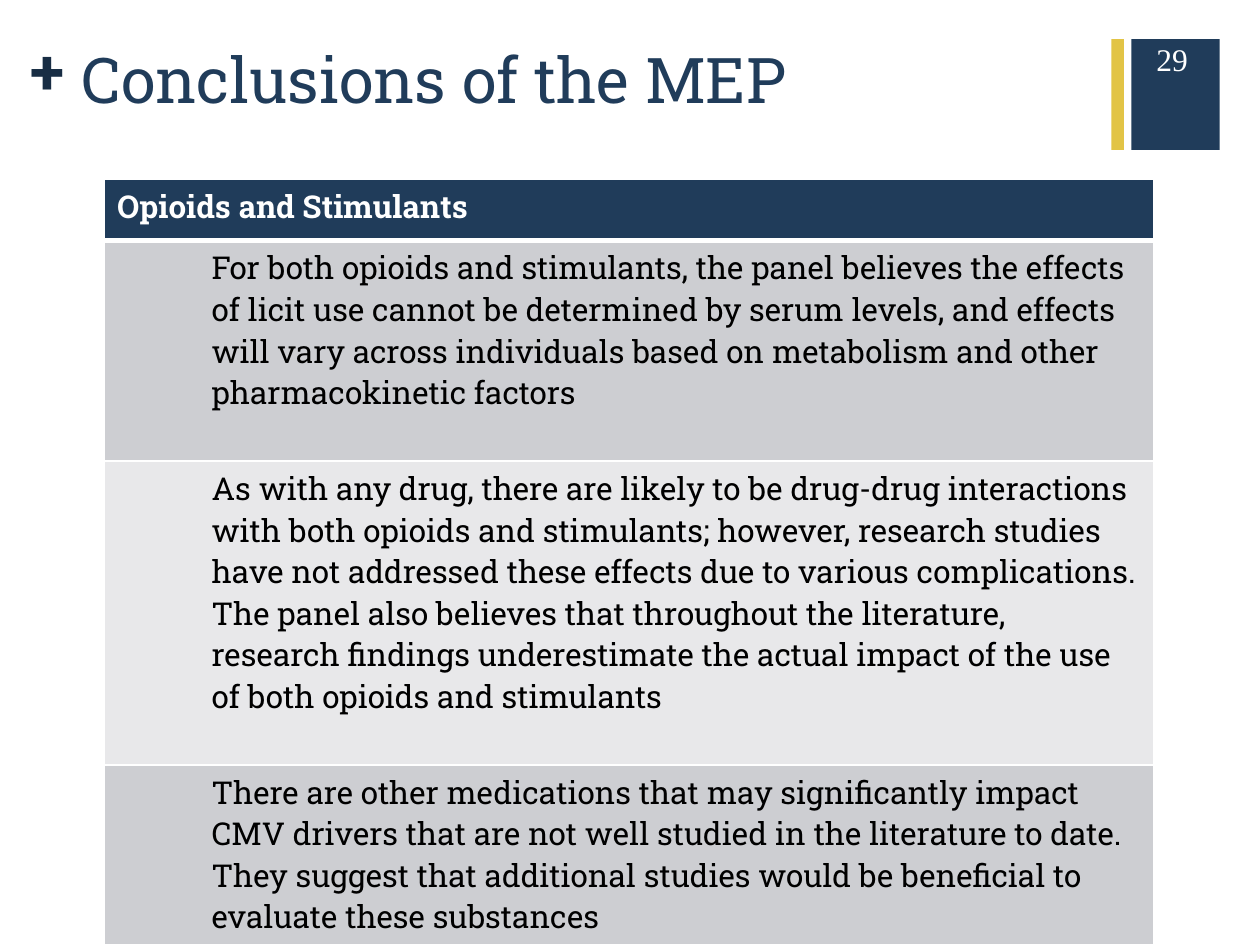
from dataclasses import dataclass

import pptx
import pptx.dml.color
import pptx.enum.shapes
import pptx.enum.text
import pptx.oxml.ns
from lxml import etree
from pptx.util import Inches


@dataclass(frozen=True)
class Theme:
    navy: str = "203C5A"
    dark: str = "182D44"
    gold: str = "E2C446"
    white: str = "FFFFFF"
    black: str = "000000"
    bands: tuple = ("CDCED2", "E8E8EA")
    slab: str = "Roboto Slab"
    serif: str = "Times New Roman"
    title: int = 36
    body: int = 18


@dataclass(frozen=True)
class Bar:
    left: float
    width: float
    color: str


@dataclass(frozen=True)
class Label:
    text: str
    box: tuple
    size: int
    color: str
    font: str
    bold: bool = False
    inset: tuple = (0.1, 0.05)


@dataclass(frozen=True)
class Row:
    text: str
    height: float


THEME = Theme()
BARS = (Bar(8.98, 0.7, THEME.navy), Bar(8.82, 0.1, THEME.gold))
LABELS = (
    Label("+", (0.24, 0.25, 0.28, 0.61), THEME.title, THEME.dark, THEME.slab, True, (0, 0)),
    Label("Conclusions of the MEP", (0.55, 0.27, 8.26, 0.65), THEME.title, THEME.navy, THEME.slab),
    Label("29", (9.08, 0.27, 0.61, 0.4), THEME.body, THEME.white, THEME.serif),
)
HEAD = Row("Opioids and Stimulants", 0.49)
ROWS = (
    Row("For both opioids and stimulants, the panel believes the effects of licit use "
        "cannot be determined by serum levels, and effects will vary across individuals "
        "based on metabolism and other pharmacokinetic factors", 1.75),
    Row("As with any drug, there are likely to be drug-drug interactions with both "
        "opioids and stimulants; however, research studies have not addressed these "
        "effects due to various complications. The panel also believes that throughout "
        "the literature, research findings underestimate the actual impact of the use "
        "of both opioids and stimulants", 2.41),
    Row("There are other medications that may significantly impact CMV drivers that are "
        "not well studied in the literature to date. They suggest that additional "
        "studies would be beneficial to evaluate these substances", 1.43),
)
COLS = (0.75, 7.58)


def rgb(color: str) -> pptx.dml.color.RGBColor:
    return pptx.dml.color.RGBColor.from_string(color)


def write(frame, text: str, size: int, color: str, font: str, bold: bool = False) -> None:
    para = frame.paragraphs[0]
    run = para.add_run()
    run.text = text
    form = {"size": pptx.util.Pt(size), "name": font, "bold": bold}
    for key, value in form.items():
        setattr(run.font, key, value)
    run.font.color.rgb = rgb(color)


def draw_bar(slide, bar: Bar) -> None:
    shape = slide.shapes.add_shape(
        pptx.enum.shapes.MSO_SHAPE.RECTANGLE,
        Inches(bar.left), Inches(0.31), Inches(bar.width), Inches(0.88))
    shape.shadow.inherit = False
    shape.fill.solid()
    shape.fill.fore_color.rgb = rgb(bar.color)
    shape.line.fill.background()


def draw_label(slide, label: Label) -> None:
    frame = slide.shapes.add_textbox(*map(Inches, label.box)).text_frame
    side, edge = map(Inches, label.inset)
    form = {
        "word_wrap": True,
        "vertical_anchor": pptx.enum.text.MSO_ANCHOR.TOP,
        "margin_left": side, "margin_right": side,
        "margin_top": edge, "margin_bottom": edge,
    }
    for key, value in form.items():
        setattr(frame, key, value)
    write(frame, label.text, label.size, label.color, label.font, label.bold)


def set_edge(cell, side: str, width: float) -> None:
    """Add one white cell border, or an empty one when width is zero."""
    name = pptx.oxml.ns.qn
    line = etree.SubElement(cell._tc.get_or_add_tcPr(), name(f"a:ln{side}"))
    line.set("w", str(pptx.util.Pt(width)))
    if width:
        fill = etree.SubElement(line, name("a:solidFill"))
        etree.SubElement(fill, name("a:srgbClr")).set("val", THEME.white)
    else:
        etree.SubElement(line, name("a:noFill"))


def style_cell(cell, fill: str, edges: dict) -> None:
    for side, width in edges.items():
        set_edge(cell, side, width)
    cell.fill.solid()
    cell.fill.fore_color.rgb = rgb(fill)


def draw_table(slide) -> None:
    rows = (HEAD, *ROWS)
    high = sum(row.height for row in rows)
    table = slide.shapes.add_table(
        len(rows), len(COLS), Inches(0.83), Inches(1.42),
        Inches(sum(COLS)), Inches(high)).table
    table.first_row = table.horz_banding = False
    for col, width in zip(table.columns, COLS):
        col.width = Inches(width)
    for num, row in enumerate(rows):
        table.rows[num].height = Inches(row.height)
        top = num == 0
        fill = THEME.navy if top else THEME.bands[(num - 1) % 2]
        for col in range(len(COLS)):
            edges = {
                "L": 1 if col == 0 else 0,
                "R": 1 if col == 1 or top else 0,
                "T": 3 if num == 1 else 1,
                "B": 3 if top else 1,
            }
            style_cell(table.cell(num, col), fill, edges)
        cell = table.cell(num, 0 if top else 1)
        color = THEME.white if top else THEME.black
        write(cell.text_frame, row.text, THEME.body, color, THEME.slab, top)
    table.cell(0, 0).merge(table.cell(0, 1))


def main() -> None:
    deck = pptx.Presentation()
    deck.slide_width, deck.slide_height = Inches(10), Inches(7.5)
    slide = deck.slides.add_slide(deck.slide_layouts[6])
    for bar in BARS:
        draw_bar(slide, bar)
    for label in LABELS:
        draw_label(slide, label)
    draw_table(slide)
    deck.save("out.pptx")


if __name__ == "__main__":
    main()
